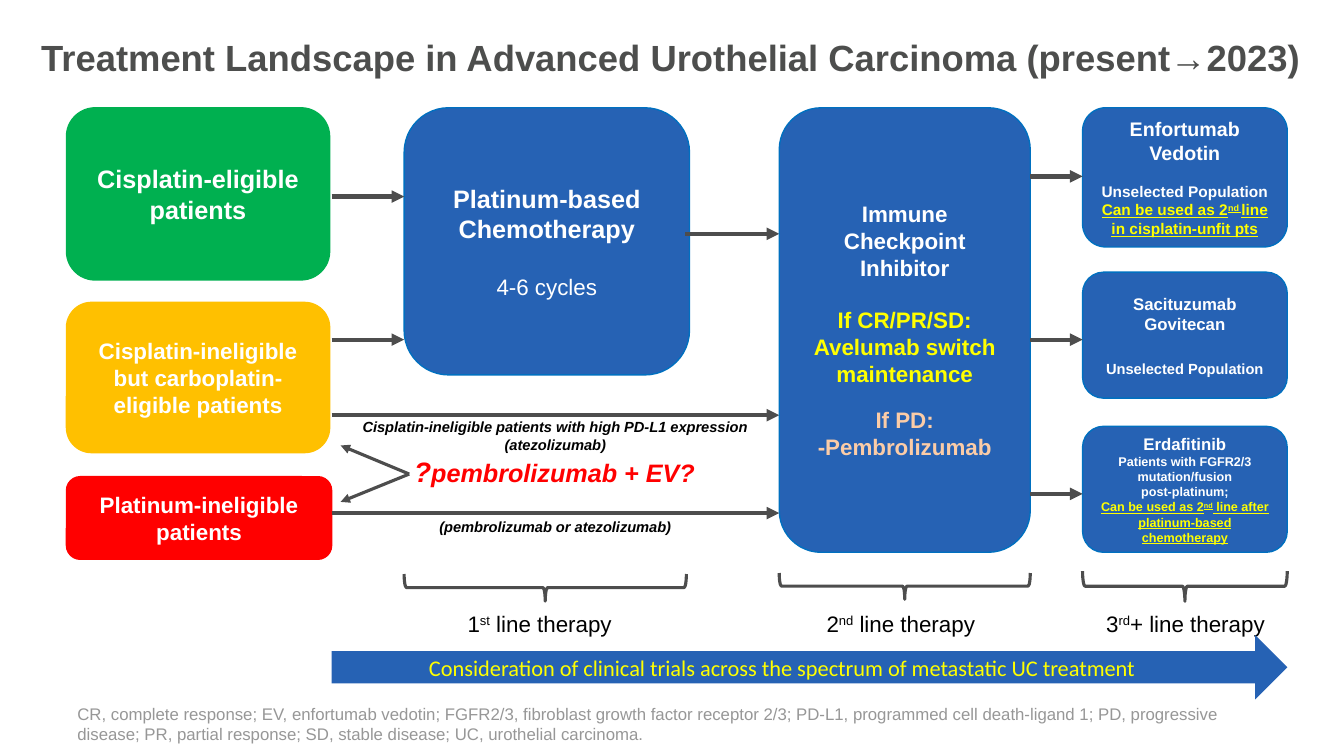
from collections import namedtuple
from dataclasses import dataclass

from lxml.etree import SubElement
from pptx import Presentation
from pptx.dml.color import RGBColor
from pptx.enum.shapes import MSO_CONNECTOR, MSO_SHAPE
from pptx.enum.text import MSO_ANCHOR, PP_ALIGN
from pptx.oxml.ns import qn
from pptx.util import Pt


@dataclass(frozen=True)
class Theme:
    blue: str = "2662B4"
    edge: str = "0070C0"
    green: str = "00B050"
    amber: str = "FFC000"
    red: str = "FF0000"
    yellow: str = "FFFF00"
    peach: str = "FBCCA7"
    white: str = "FFFFFF"
    black: str = "000000"
    title_grey: str = "4D4E4D"
    line_grey: str = "4D4D4D"
    note_grey: str = "979797"
    title: float = 26
    heading: float = 18
    question: float = 20
    body: float = 16
    drug: float = 14
    small: float = 12
    detail: float = 11
    caption: float = 10.5
    tiny: float = 9


THEME = Theme()


class Box(namedtuple("Box", "left top width height")):
    @property
    def right(self):
        return self.left + self.width

    @property
    def bottom(self):
        return self.top + self.height

    @property
    def center(self):
        return self.left + self.width / 2


def run(text, size, color=THEME.white, bold=True, italic=False, underline=False, name="Arial"):
    font = dict(size=Pt(size), bold=bold, italic=italic, underline=underline, name=name)
    return text, color, font


def write(frame, paragraphs, anchor, align, wrap=True):
    frame.word_wrap = wrap
    frame.vertical_anchor = anchor
    for index, (gap, *runs) in enumerate(paragraphs):
        paragraph = frame.add_paragraph() if index else frame.paragraphs[0]
        paragraph.alignment = align
        if gap:
            paragraph.space_before = Pt(gap)
        for text, color, font in runs:
            for order, part in enumerate(text.split("^")):
                piece = paragraph.add_run()
                piece.text = part
                for attribute, value in font.items():
                    setattr(piece.font, attribute, value)
                piece.font.color.rgb = RGBColor.from_string(color)
                if order % 2:
                    piece.font._element.set("baseline", "30000")


def label(slide, box, *paragraphs, align=PP_ALIGN.CENTER, anchor=MSO_ANCHOR.TOP, wrap=True):
    frame = slide.shapes.add_textbox(*map(Pt, box)).text_frame
    write(frame, paragraphs, anchor, align, wrap)


def card(slide, box, fill, edge, *paragraphs):
    shape = slide.shapes.add_shape(MSO_SHAPE.ROUNDED_RECTANGLE, *map(Pt, box))
    shape.shadow.inherit = False
    shape.fill.solid()
    shape.fill.fore_color.rgb = RGBColor.from_string(fill)
    shape.line.color.rgb = RGBColor.from_string(edge)
    shape.line.width = Pt(1)
    write(shape.text_frame, paragraphs, MSO_ANCHOR.MIDDLE, PP_ALIGN.CENTER)


def arrow(slide, start, end, width=3):
    connector = slide.shapes.add_connector(MSO_CONNECTOR.STRAIGHT, *map(Pt, (*start, *end)))
    connector.line.color.rgb = RGBColor.from_string(THEME.line_grey)
    connector.line.width = Pt(width)
    properties = connector._element.spPr
    SubElement(properties.get_or_add_ln(), qn("a:tailEnd"), type="triangle")
    SubElement(properties, qn("a:effectLst"))


def therapy_line(slide, box, text, shift):
    brace = slide.shapes.add_shape(
        MSO_SHAPE.LEFT_BRACE,
        Pt(box.center - box.height / 2), Pt(box.top + box.height / 2 - box.width / 2),
        Pt(box.height), Pt(box.width))
    brace.rotation = 270
    brace.shadow.inherit = False
    brace.fill.background()
    brace.line.color.rgb = RGBColor.from_string(THEME.line_grey)
    brace.line.width = Pt(2.25)
    label(slide, Box(box.center + shift - 65, 432, 130, 26.6),
          (0, run(text, THEME.body, THEME.black, bold=False)), wrap=False)


def title(slide, box):
    label(slide, box,
          (0, run("Treatment Landscape in Advanced Urothelial Carcinoma (present→2023)",
                  THEME.title, THEME.title_grey)),
          align=PP_ALIGN.LEFT, anchor=MSO_ANCHOR.MIDDLE)


def patient_groups(slide, box):
    groups = [
        (0, 123, 0, THEME.green, THEME.heading, ["Cisplatin-eligible", "patients"]),
        (139, 107.3, 0, THEME.amber, THEME.body,
         ["Cisplatin-ineligible but carboplatin-eligible patients"]),
        (263.5, 59, 1.4, THEME.red, THEME.body, ["Platinum-ineligible", "patients"]),
    ]
    for offset, height, extra, color, size, lines in groups:
        card(slide, Box(box.left, box.top + offset, box.width + extra, height), color, color,
             *[(0, run(line, size)) for line in lines])


def first_line(slide, box, start, end):
    card(slide, box, THEME.blue, THEME.edge,
         (0, run("Platinum-based Chemotherapy", THEME.heading)),
         (20.7, run("4-6 cycles", THEME.body, bold=False)))
    for offset in (63.4, 165.6):
        arrow(slide, (start, box.top + offset), (box.left, box.top + offset))
    arrow(slide, (box.right - 3, box.top + 90), (end, box.top + 90))
    for offset in (219.6, 289.5):
        arrow(slide, (start, box.top + offset), (end, box.top + offset))
    caption = dict(size=THEME.caption, color=THEME.black, italic=True)
    label(slide, Box(box.left - 38.9, box.top + 218.2, 293.8, 32.4),
          (0, run("Cisplatin-ineligible patients with high PD-L1 expression", **caption)),
          (0, run("(atezolizumab)", **caption)), wrap=False)
    label(slide, Box(box.left + 16.6, box.top + 289.5, 182.9, 20),
          (0, run("(pembrolizumab or atezolizumab)", **caption)), wrap=False)
    label(slide, Box(box.left, box.top + 244, 460, 31.7),
          (0, run("?", THEME.question, THEME.red, italic=True),
           run("pembrolizumab + EV?", THEME.heading, THEME.red, italic=True)),
          align=PP_ALIGN.LEFT)
    fork = (box.left + 3.6, box.top + 261.6)
    for offset in (241.2, 281.5):
        arrow(slide, fork, (box.left - 45.4, box.top + offset), 2.25)


def second_line(slide, box):
    card(slide, box, THEME.blue, THEME.edge,
         (0, run("Immune Checkpoint Inhibitor", THEME.body)),
         (18.4, run("If CR/PR/SD: Avelumab switch maintenance", THEME.body, THEME.yellow)),
         (13.8, run("If PD:", THEME.body, THEME.peach)),
         (0, run("-Pembrolizumab", THEME.body, THEME.peach)))


def third_line(slide, box, start):
    drugs = [
        (0, 99.4, 49, [
            (0, run("Enfortumab Vedotin", THEME.drug)),
            (12.6, run("Unselected Population", THEME.detail)),
            (0, run("Can be used as 2^nd ^line in cisplatin-unfit pts",
                    THEME.detail, THEME.yellow, underline=True))]),
        (117.4, 90, 165.6, [
            (0, run("Sacituzumab Govitecan", THEME.small)),
            (18.4, run("Unselected Population", THEME.caption))]),
        (227.5, 90, 275.8, [
            (0, run("Erdafitinib", THEME.small)),
            (0, run("Patients with FGFR2/3 mutation/fusion", THEME.tiny)),
            (0, run("post-platinum;", THEME.tiny)),
            (0, run("Can be used as 2^nd^ line after platinum-based chemotherapy",
                    THEME.tiny, THEME.yellow, underline=True))]),
    ]
    for offset, height, entry, paragraphs in drugs:
        card(slide, Box(box.left, box.top + offset, box.width, height),
             THEME.blue, THEME.edge, *paragraphs)
        arrow(slide, (start, box.top + entry), (box.left, box.top + entry))


def trials_banner(slide, box):
    banner = slide.shapes.add_shape(MSO_SHAPE.RIGHT_ARROW, *map(Pt, box))
    banner.shadow.inherit = False
    banner.fill.solid()
    banner.fill.fore_color.rgb = RGBColor.from_string(THEME.blue)
    banner.line.fill.background()
    label(slide, Box(box.left + 6.5, box.top + 10, 630.7, 26.6),
          (0, run("Consideration of clinical trials across the spectrum of metastatic UC treatment",
                  THEME.body, THEME.yellow, bold=False, name="Calibri")))


def abbreviations(slide, box):
    label(slide, box,
          (0, run("CR, complete response; EV, enfortumab vedotin; FGFR2/3, fibroblast growth factor "
                  "receptor 2/3; PD-L1, programmed cell death-ligand 1; PD, progressive disease; "
                  "PR, partial response; SD, stable disease; UC, urothelial carcinoma.",
                  THEME.small, THEME.note_grey, bold=False)),
          align=PP_ALIGN.LEFT, anchor=MSO_ANCHOR.BOTTOM)


def main():
    deck = Presentation()
    deck.slide_width, deck.slide_height = Pt(960), Pt(540)
    slide = deck.slides.add_slide(deck.slide_layouts[6])
    patients = Box(47.5, 77, 188, 322.5)
    chemotherapy = Box(288.7, 77, 203.8, 190.8)
    immunotherapy = Box(556.6, 77, 179.3, 317.5)
    later_drugs = Box(773.3, 77, 146.2, 317.5)
    title(slide, Box(22.3, 5, 930.2, 71.3))
    patient_groups(slide, patients)
    first_line(slide, chemotherapy, patients.right + 1.4, immunotherapy.left)
    second_line(slide, immunotherapy)
    third_line(slide, later_drugs, immunotherapy.right)
    therapy_line(slide, Box(chemotherapy.left, 410, 201.6, 19.4), "1^st^ line therapy", -4)
    therapy_line(slide, Box(immunotherapy.left, 409.3, 179.3, 18.7), "2^nd^ line therapy", -2.8)
    therapy_line(slide, Box(later_drugs.left, 407.9, 146.2, 21.6), "3^rd^+ line therapy", 0.4)
    trials_banner(slide, Box(236.9, 453.6, 682.6, 46))
    abbreviations(slide, Box(48.2, 500.4, 846, 34.6))
    deck.save("out.pptx")


if __name__ == "__main__":
    main()
